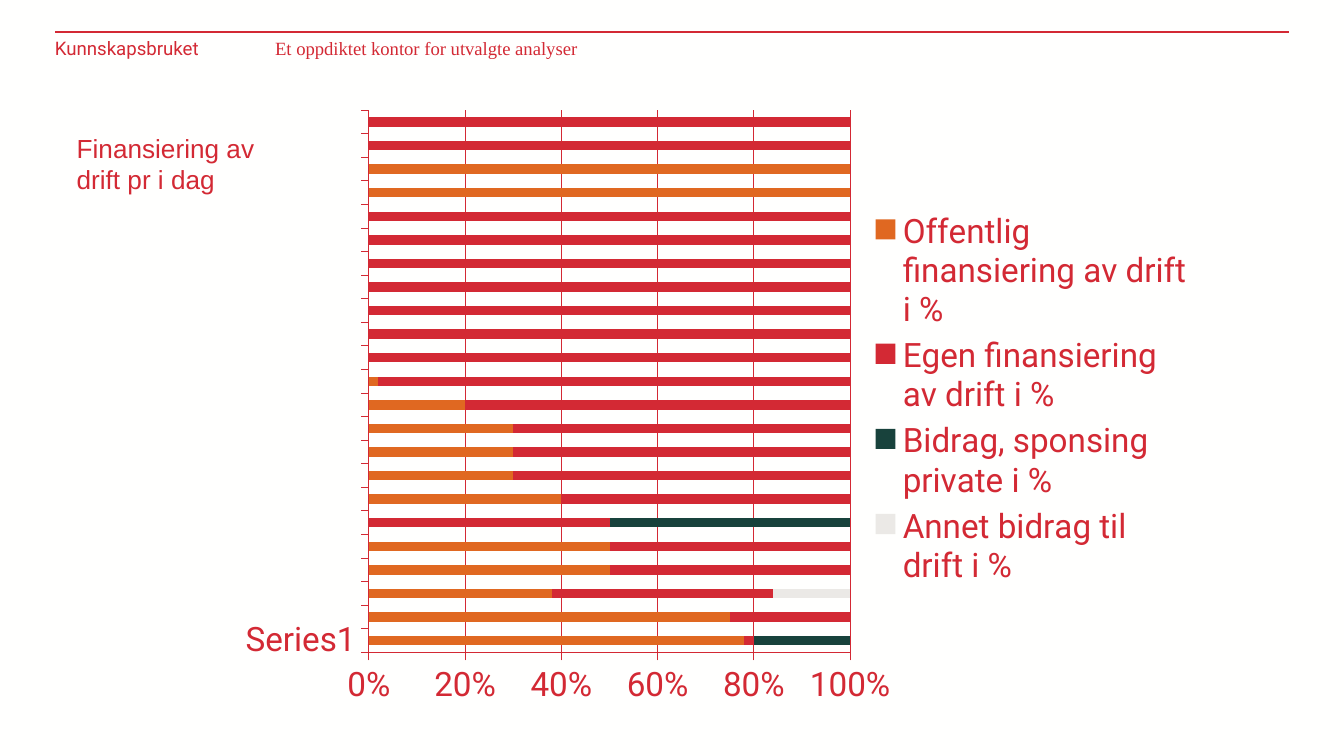
"""Build a slide with a stacked bar chart of how operations are financed."""
from dataclasses import dataclass
from typing import Optional

from lxml.etree import SubElement
from pptx import Presentation
from pptx.chart.data import CategoryChartData
from pptx.dml.color import RGBColor
from pptx.enum.chart import XL_CHART_TYPE as ChartType
from pptx.enum.chart import XL_LEGEND_POSITION as LegendPosition
from pptx.enum.chart import XL_TICK_LABEL_POSITION as LabelPosition
from pptx.enum.chart import XL_TICK_MARK as TickMark
from pptx.enum.shapes import MSO_CONNECTOR as Connector
from pptx.enum.text import MSO_AUTO_SIZE as AutoSize
from pptx.oxml.ns import qn
from pptx.util import Cm, Pt

RED = "D32934"
MARGIN = 1.04
HAIRLINE = 0.5


@dataclass
class Source:
    name: str
    color: str
    shares: list[Optional[int]]


NONE = [None]
SOURCES = [
    Source("Offentlig finansiering av drift i %", "E06821",
           [78, 75, 38, 50, 50, None, 40, 30, 30, 30, 20, 2]
           + NONE * 7 + [100, 100] + NONE * 2),
    Source("Egen finansiering av drift i %", RED,
           [2, 25, 46, 50, 50, 50, 60, 70, 70, 70, 80, 98]
           + [100] * 7 + NONE * 2 + [100, 100]),
    Source("Bidrag, sponsing private i %", "18423C",
           [20] + NONE * 4 + [50] + NONE * 17),
    Source("Annet bidrag til drift i %", "EBE9E6",
           NONE * 2 + [16] + NONE * 20),
]
PLOT = {"x": 0.119, "y": 0.052, "w": 0.505, "h": 0.841}


def paint(target, color: str) -> None:
    """Give a fill a solid colour."""
    target.solid()
    target.fore_color.rgb = RGBColor.from_string(color)


def stroke(line, color: str, width: float) -> None:
    """Give a line its colour and width in points."""
    paint(line.fill, color)
    line.width = Pt(width)


def style(font, *, size: float, face: str, color: str = RED) -> None:
    """Set size, typeface and colour of a font."""
    font.size = Pt(size)
    font.name = face
    paint(font.fill, color)


def write(paragraph, text: str, **font_format) -> None:
    """Append a formatted run to a paragraph."""
    run = paragraph.add_run()
    run.text = text
    style(run.font, **font_format)


def add_frame(slide, left: float, top: float, width: float, height: float):
    """Add a wrapping text box and return its text frame."""
    frame = slide.shapes.add_textbox(
        Cm(left), Cm(top), Cm(width), Cm(height)).text_frame
    frame.word_wrap = True
    return frame


def add_header(slide) -> None:
    """Draw the rule and the sender line beneath it."""
    rule = slide.shapes.add_connector(
        Connector.STRAIGHT, Cm(MARGIN), Cm(0.61), Cm(25.4 - MARGIN), Cm(0.61))
    stroke(rule.line, RED, 1)
    SubElement(rule._element.spPr, qn("a:effectLst"))

    frame = add_frame(slide, MARGIN, 0.69, 15.7, 0.76)
    frame.margin_left = frame.margin_right = Cm(0)
    frame.margin_top = frame.margin_bottom = Cm(0)
    sender = frame.paragraphs[0]
    tabs = SubElement(sender._p.get_or_add_pPr(), qn("a:tabLst"))
    SubElement(tabs, qn("a:tab"), pos=str(Cm(4.16)), algn="l")
    write(sender, "Kunnskapsbruket", size=10, face="Roboto")
    write(sender, "\tEt oppdiktet kontor for utvalgte analyser",
          size=10, face="Times New Roman")


def add_title(slide) -> None:
    """Write the heading beside the chart."""
    frame = add_frame(slide, 1.2, 2.37, 4.19, 1.45)
    frame.auto_size = AutoSize.SHAPE_TO_FIT_TEXT
    write(frame.paragraphs[0], "Finansiering av drift pr i dag",
          size=14, face="Arial")


def place_plot(chart) -> None:
    """Fix the inner plot area as fractions of the chart."""
    plot_area = chart._chartSpace.chart.plotArea
    for old in plot_area.findall(qn("c:layout")):
        plot_area.remove(old)
    layout = SubElement(plot_area, qn("c:layout"))
    plot_area.insert(0, layout)
    manual = SubElement(layout, qn("c:manualLayout"))
    settings = {"layoutTarget": "inner", "xMode": "edge", "yMode": "edge"}
    for tag, value in (settings | PLOT).items():
        SubElement(manual, qn(f"c:{tag}"), val=str(value))


def add_financing_chart(slide, sources: list[Source]) -> None:
    """Chart each respondent's financing as stacked shares."""
    data = CategoryChartData()
    data.categories = ["Series1"] + [""] * (len(sources[0].shares) - 1)
    for source in sources:
        data.add_series(source.name, source.shares)
    chart = slide.shapes.add_chart(
        ChartType.BAR_STACKED_100, Cm(4.64), Cm(1.45), Cm(18.2), Cm(12.19),
        data).chart
    style(chart.font, size=18, face="Roboto")
    chart.has_title = False
    chart.has_legend = True
    chart.legend.position = LegendPosition.RIGHT
    chart.legend.include_in_layout = False

    bars = chart.plots[0]
    bars.gap_width = 150
    bars.overlap = 100
    bars.vary_by_categories = False
    for series, source in zip(bars.series, sources):
        paint(series.format.fill, source.color)

    for axis in (chart.category_axis, chart.value_axis):
        axis.major_tick_mark = TickMark.OUTSIDE
        axis.minor_tick_mark = TickMark.NONE
        axis.tick_label_position = LabelPosition.NEXT_TO_AXIS
        stroke(axis.format.line, RED, HAIRLINE)
    shares = chart.value_axis
    shares.has_major_gridlines = True
    stroke(shares.major_gridlines.format.line, RED, HAIRLINE)
    shares.minimum_scale, shares.maximum_scale = 0, 1
    shares.major_unit = 0.2
    shares.tick_labels.number_format = "0%"
    shares.tick_labels.number_format_is_linked = False
    place_plot(chart)


def main() -> None:
    """Assemble and save the slide."""
    deck = Presentation()
    deck.slide_width, deck.slide_height = Cm(25.4), Cm(14.29)
    slide = deck.slides.add_slide(deck.slide_layouts[6])
    paint(slide.background.fill, "FFFFFE")
    add_header(slide)
    add_title(slide)
    add_financing_chart(slide, SOURCES)
    deck.save("out.pptx")


if __name__ == "__main__":
    main()
